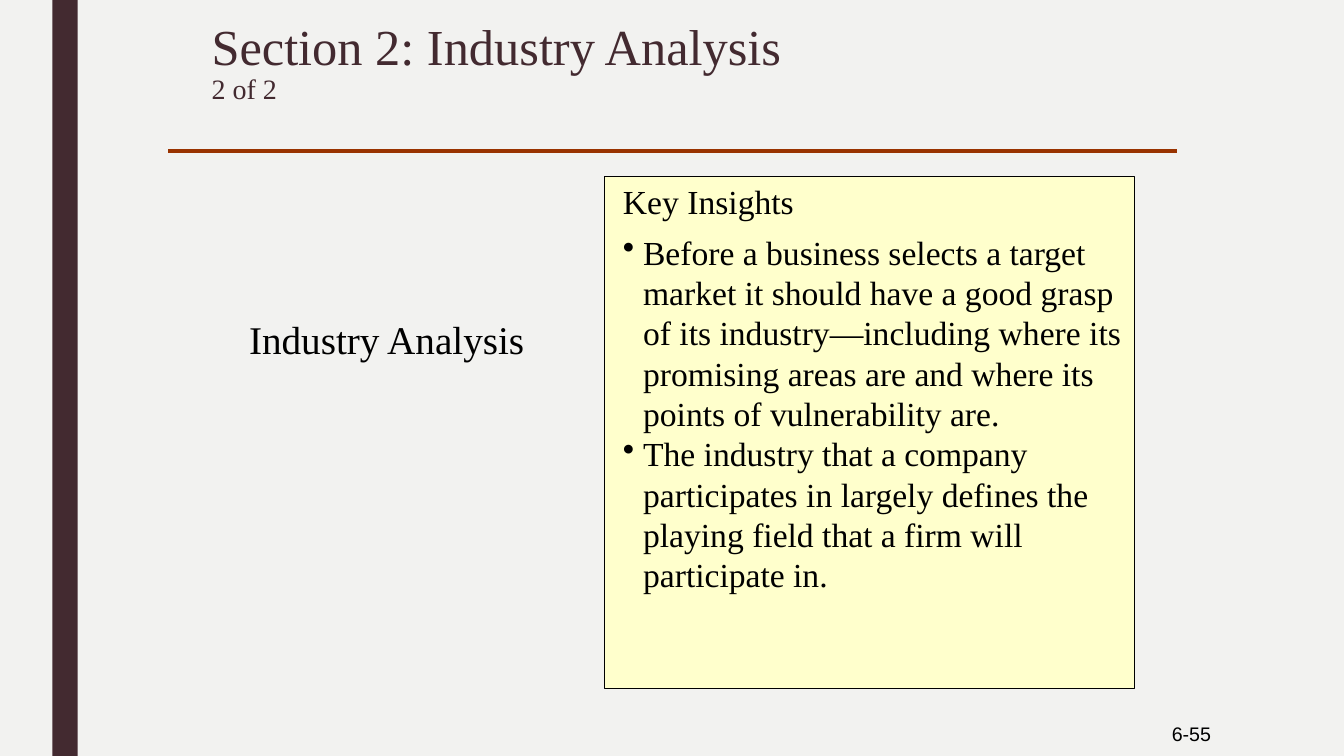
from pptx import Presentation
from pptx.dml.color import RGBColor
from pptx.enum.shapes import MSO_CONNECTOR, MSO_SHAPE
from pptx.enum.text import MSO_ANCHOR, PP_ALIGN
from pptx.oxml.ns import qn
from pptx.util import Pt
from lxml import etree

PX = 9144  # EMU per px, 100 px to the inch
WIDTH, HEIGHT = 1333, 750

PAPER = RGBColor(0xF2, 0xF2, 0xF0)
PLUM = RGBColor(0x43, 0x2A, 0x30)
RUST = RGBColor(0x99, 0x33, 0x00)
CREAM = RGBColor(0xFF, 0xFF, 0xCC)
BLACK = RGBColor(0x00, 0x00, 0x00)

SERIF, SANS = "Times New Roman", "Arial"
RECTANGLE, STRAIGHT = MSO_SHAPE.RECTANGLE, MSO_CONNECTOR.STRAIGHT
LEFT, CENTER, RIGHT = PP_ALIGN.LEFT, PP_ALIGN.CENTER, PP_ALIGN.RIGHT
TOP, MIDDLE = MSO_ANCHOR.TOP, MSO_ANCHOR.MIDDLE

INSIGHTS = [
    "Before a business selects a target market it should have a good grasp "
    "of its industry—including where its promising areas are and where its "
    "points of vulnerability are.",
    "The industry that a company participates in largely defines the "
    "playing field that a firm will participate in.",
]


def emu(*lengths):
    return [length * PX for length in lengths]


def add_rectangle(page, box, fill, line=None):
    shape = page.shapes.add_shape(RECTANGLE, *emu(*box))
    shape.shadow.inherit = False
    shape.fill.solid()
    shape.fill.fore_color.rgb = fill
    if line is None:
        shape.line.fill.background()
    else:
        shape.line.color.rgb = line
        shape.line.width = Pt(0.75)


def add_text(page, box, lines, size, color=BLACK, font=SERIF, align=LEFT, anchor=TOP):
    frame = page.shapes.add_textbox(*emu(*box)).text_frame
    frame.word_wrap = True
    frame.vertical_anchor = anchor
    for index, line in enumerate(lines):
        para = frame.add_paragraph() if index else frame.paragraphs[0]
        para.text = line
        para.alignment = align
        para.font.size = Pt(size)
        para.font.name = font
        para.font.color.rgb = color
    return frame


def add_bullet(para, hang):
    properties = para._p.get_or_add_pPr()
    properties.set("marL", str(hang * PX))
    properties.set("indent", str(-hang * PX))
    bullet = etree.Element(qn("a:buChar"), char="•")
    properties.insert_element_before(bullet, "a:tabLst", "a:defRPr", "a:extLst")


def add_heading(page, box):
    left, top, width, height = box
    # Title with a smaller part number on its second line
    frame = add_text(page, (left + 33, top, width - 58, height), ["Section 2: Industry Analysis"], 36, PLUM)
    title = frame.paragraphs[0]
    title.line_spacing = 0.89
    title.add_line_break()
    span = title.add_run()
    span.text = "2 of 2"
    span.font.size = Pt(20)
    # Rule under the title
    rule_top = top + 133
    rule = page.shapes.add_connector(STRAIGHT, *emu(left, rule_top, left + width, rule_top))
    rule.line.color.rgb = RUST
    rule.line.width = Pt(3)
    etree.SubElement(rule._element.spPr, qn("a:effectLst"))


def add_insights(page, box):
    left, top, width, height = box
    add_rectangle(page, box, CREAM, BLACK)
    add_text(page, (left + 8, top, width - 17, 51), ["Key Insights"], 24)
    frame = add_text(page, (left + 8, top + 50, width, 374), INSIGHTS, 24)
    for para in frame.paragraphs:
        add_bullet(para, 20)


def main():
    deck = Presentation()
    deck.slide_width, deck.slide_height = emu(WIDTH, HEIGHT)
    page = deck.slides.add_slide(deck.slide_layouts[6])
    page.background.fill.solid()
    page.background.fill.fore_color.rgb = PAPER

    # Side band
    add_rectangle(page, (52, 0, 25, HEIGHT), PLUM)
    add_heading(page, (167, 17, 1000, 125))
    # Topic and its insights
    add_text(page, (167, 308, 433, 57), ["Industry Analysis"], 28, align=CENTER)
    add_insights(page, (600, 175, 525, 508))
    # Page number
    add_text(page, (1036, 706, 175, 44), ["6-55"], 14, font=SANS, align=RIGHT, anchor=MIDDLE)

    deck.save("out.pptx")


if __name__ == "__main__":
    main()
